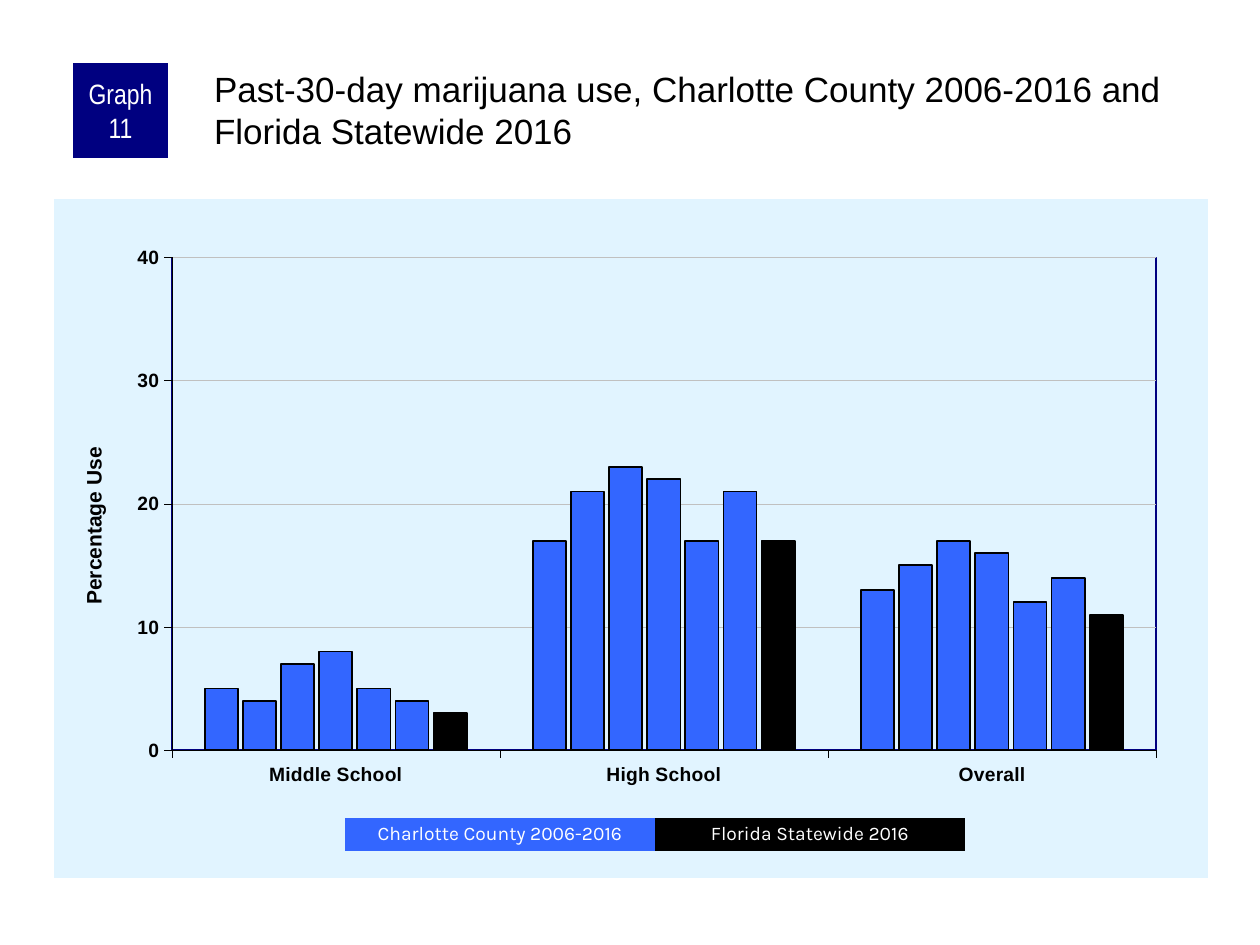
"""Build a slide with a column chart of past-30-day marijuana use."""
from lxml import etree
from pptx import Presentation
from pptx.chart.data import CategoryChartData
from pptx.dml.color import RGBColor
from pptx.enum.chart import XL_CHART_TYPE, XL_TICK_MARK
from pptx.enum.shapes import MSO_SHAPE
from pptx.enum.text import MSO_ANCHOR, MSO_AUTO_SIZE, PP_ALIGN
from pptx.oxml import parse_xml
from pptx.oxml.ns import qn
from pptx.util import Pt

CLUSTERED = XL_CHART_TYPE.COLUMN_CLUSTERED
OUTSIDE = XL_TICK_MARK.OUTSIDE
RECTANGLE = MSO_SHAPE.RECTANGLE
TOP, MIDDLE = MSO_ANCHOR.TOP, MSO_ANCHOR.MIDDLE
LEFT, CENTER = PP_ALIGN.LEFT, PP_ALIGN.CENTER
NO_FIT = MSO_AUTO_SIZE.NONE

COLORS = {"county": "3366FF", "state": "000000", "badge": "000080",
          "panel": "E1F4FF", "grid": "C0C0C0", "ink": "000000", "white": "FFFFFF"}

TITLE = "Past-30-day marijuana use, Charlotte County 2006-2016 and Florida Statewide 2016"
BADGE = "Graph 11"
AXIS_TITLE = "Percentage Use"
LEVELS = ["Middle School", "High School", "Overall"]
COUNTY_USE = [(5, 17, 13), (4, 21, 15), (7, 23, 17), (8, 22, 16), (5, 17, 12), (4, 21, 14)]
STATE_USE = (3, 17, 11)
KEYS = [("Charlotte County 2006-2016", "county"), ("Florida Statewide 2016", "state")]

SLIDE = (1260, 945)
CHART_BOX = (54, 199, 1154, 679)
BADGE_BOX = (73, 63, 95, 95)
TITLE_BOX = (210, 63, 998, 105)
KEY_LEFT, KEY_TOP, KEY_WIDTH, KEY_HEIGHT = 345, 818, 310, 33
PLOT_LAYOUT = {"layoutTarget": "inner", "xMode": "edge", "yMode": "edge",
               "x": 0.102, "y": 0.086, "w": 0.853, "h": 0.726}
AXIS_TITLE_LAYOUT = {"xMode": "edge", "yMode": "edge", "x": 0.02, "y": 0.36}

CHART_NS = 'xmlns:c="http://schemas.openxmlformats.org/drawingml/2006/chart"'
DRAW_NS = 'xmlns:a="http://schemas.openxmlformats.org/drawingml/2006/main"'


def px(length):
    return round(length * 914400 / 126)


def rgb(name):
    return RGBColor.from_string(COLORS[name])


def style_font(font, face, size, color, bold=False):
    font.name, font.size, font.bold = face, Pt(size), bold
    font.color.rgb = rgb(color)


def style_line(line, color, width):
    line.color.rgb = rgb(color)
    line.width = Pt(width)


def write(frame, text, face, size, color, align, anchor, insets, spacing=1.0):
    frame.word_wrap, frame.auto_size = True, NO_FIT
    frame.vertical_anchor = anchor
    (frame.margin_left, frame.margin_top,
     frame.margin_right, frame.margin_bottom) = map(px, insets)
    paragraph = frame.paragraphs[0]
    paragraph.alignment, paragraph.line_spacing = align, spacing
    run = paragraph.add_run()
    run.text = text
    style_font(run.font, face, size, color)


def add_block(slide, box, fill, text, face, size, insets, spacing=1.0):
    block = slide.shapes.add_shape(RECTANGLE, *map(px, box))
    block.shadow.inherit = False
    block.fill.solid()
    block.fill.fore_color.rgb = rgb(fill)
    block.line.fill.background()
    write(block.text_frame, text, face, size, "white", CENTER, MIDDLE, insets, spacing)


def set_layout(parent, position, values):
    for old in parent.findall(qn("c:layout")):
        parent.remove(old)
    layout = etree.Element(qn("c:layout"))
    manual = etree.SubElement(layout, qn("c:manualLayout"))
    for tag, value in values.items():
        etree.SubElement(manual, qn("c:" + tag), val=str(value))
    parent.insert(position, layout)


def area_format(fill, line):
    return parse_xml(f"<c:spPr {CHART_NS} {DRAW_NS}>{fill}{line}</c:spPr>")


def solid(name):
    return f'<a:solidFill><a:srgbClr val="{COLORS[name]}"/></a:solidFill>'


def add_use_chart(slide):
    series_list = [(use, "county") for use in COUNTY_USE] + [(STATE_USE, "state")]
    use_data = CategoryChartData()
    use_data.categories = LEVELS
    for number, (use, _) in enumerate(series_list, 1):
        use_data.add_series(f"Series {number}", use)
    chart = slide.shapes.add_chart(CLUSTERED, *map(px, CHART_BOX), use_data).chart
    chart.has_legend = chart.has_title = False
    style_font(chart.font, "Arial", 8, "ink")

    columns = chart.plots[0]
    columns.gap_width, columns.overlap, columns.vary_by_categories = 200, -15, False
    for series, (_, color) in zip(columns.series, series_list):
        series.format.fill.solid()
        series.format.fill.fore_color.rgb = rgb(color)
        style_line(series.format.line, "ink", 1)

    percent = chart.value_axis
    for axis in (chart.category_axis, percent):
        axis.major_tick_mark = OUTSIDE
        style_font(axis.tick_labels.font, "Arial", 11, "ink", True)
        style_line(axis.format.line, "ink", 0.25)
    percent.minimum_scale, percent.maximum_scale, percent.major_unit = 0, 40, 10
    style_line(percent.major_gridlines.format.line, "grid", 0.25)
    heading = percent.axis_title.text_frame.paragraphs[0].add_run()
    heading.text = AXIS_TITLE
    style_font(heading.font, "Arial", 12, "ink", True)
    set_layout(percent.axis_title._element, 1, AXIS_TITLE_LAYOUT)

    chart_part = chart._chartSpace.find(qn("c:chart"))
    plot_area = chart_part.find(qn("c:plotArea"))
    set_layout(plot_area, 0, PLOT_LAYOUT)
    border = f'<a:ln w="{Pt(1)}">{solid("badge")}</a:ln>'
    plot_area.append(area_format("<a:noFill/>", border))
    chart_part.addnext(area_format(solid("panel"), "<a:ln><a:noFill/></a:ln>"))


def main():
    deck = Presentation()
    deck.slide_width, deck.slide_height = map(px, SLIDE)
    slide = deck.slides.add_slide(deck.slide_layouts[5])
    title = slide.shapes.title
    title.left, title.top, title.width, title.height = map(px, TITLE_BOX)
    write(title.text_frame, TITLE, "Arial", 20, "ink", LEFT, TOP, (4, 4, 0, 0))
    add_use_chart(slide)
    add_block(slide, BADGE_BOX, "badge", BADGE, "Arial Narrow", 16, (6, 0, 6, 0))
    for index, (label, color) in enumerate(KEYS):
        box = (KEY_LEFT + index * KEY_WIDTH, KEY_TOP, KEY_WIDTH, KEY_HEIGHT)
        add_block(slide, box, color, label, "Karla", 11, (13, 6, 13, 6), 0.9)
    deck.save("out.pptx")


if __name__ == "__main__":
    main()
